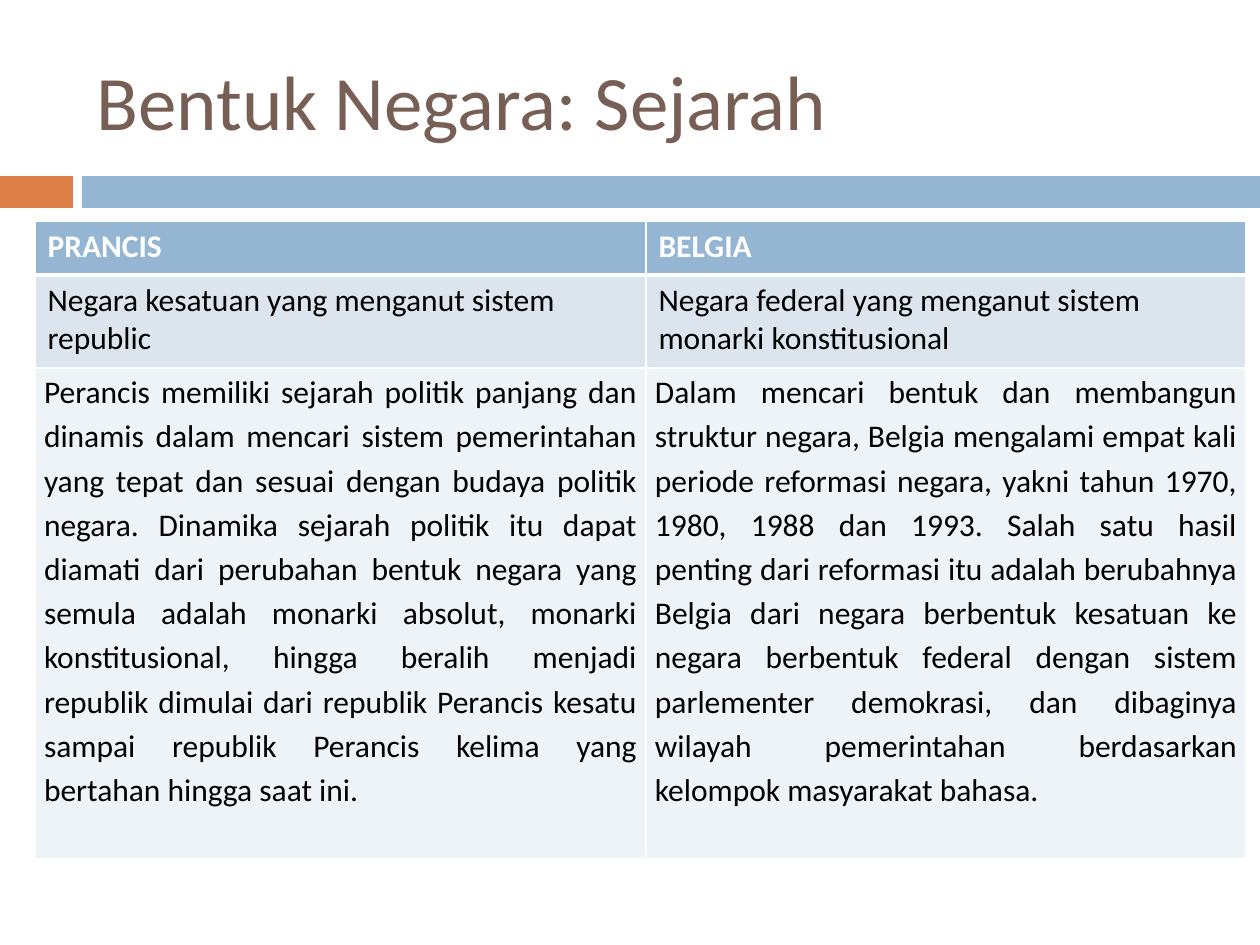
"""Build a slide comparing the history of the form of state in France and Belgium."""
from dataclasses import dataclass

import lxml.etree
import pptx
import pptx.dml.color
import pptx.enum.shapes
import pptx.enum.text
import pptx.oxml.ns
import pptx.util

PIXELS_PER_INCH = 126


@dataclass(frozen=True)
class Theme:
    font: str = "Calibri"
    title_size: int = 44
    table_size: int = 18
    title: str = "775F55"
    orange: str = "DD8047"
    blue: str = "94B6D2"
    band: str = "DCE5EE"
    pale: str = "EEF3F7"
    white: str = "FFFFFF"
    black: str = "000000"


THEME = Theme()


@dataclass(frozen=True)
class Box:
    left: int
    top: int
    width: int
    height: int


@dataclass(frozen=True)
class Bar:
    box: Box
    color: str


@dataclass(frozen=True)
class Row:
    height: int
    texts: tuple[str, str]
    fill: str
    color: str = THEME.black
    header: bool = False
    justified: bool = False
    top_border: int = 1
    bottom_border: int = 1


TITLE_BOX = Box(84, 32, 1124, 136)
TABLE_BOX = Box(35, 221, 1211, 638)
COLUMN_WIDTHS = (611, 600)
BODY_INSET = 9

BARS = (
    Bar(Box(0, 176, 73, 32), THEME.orange),
    Bar(Box(82, 176, 1178, 32), THEME.blue),
)

ROWS = (
    Row(54, ("PRANCIS", "BELGIA"), THEME.blue, THEME.white, header=True, bottom_border=3),
    Row(
        93,
        (
            "Negara kesatuan yang menganut sistem republic",
            "Negara federal yang menganut sistem monarki konstitusional",
        ),
        THEME.band,
        top_border=3,
    ),
    Row(
        491,
        (
            "Perancis memiliki sejarah politik panjang dan dinamis dalam mencari sistem "
            "pemerintahan yang tepat dan sesuai dengan budaya politik negara. Dinamika "
            "sejarah politik itu dapat diamati dari perubahan bentuk negara yang semula "
            "adalah monarki absolut, monarki konstitusional, hingga beralih menjadi "
            "republik dimulai dari republik Perancis kesatu sampai republik Perancis "
            "kelima yang bertahan hingga saat ini.",
            "Dalam mencari bentuk dan membangun struktur negara, Belgia mengalami empat "
            "kali periode reformasi negara, yakni tahun 1970, 1980, 1988 dan 1993. Salah "
            "satu hasil penting dari reformasi itu adalah berubahnya Belgia dari negara "
            "berbentuk kesatuan ke negara berbentuk federal dengan sistem parlementer "
            "demokrasi, dan dibaginya wilayah pemerintahan berdasarkan kelompok "
            "masyarakat bahasa.",
        ),
        THEME.pale,
        justified=True,
    ),
)


def px(length: int) -> pptx.util.Emu:
    return pptx.util.Inches(length / PIXELS_PER_INCH)


def place(box: Box) -> tuple[pptx.util.Emu, ...]:
    return px(box.left), px(box.top), px(box.width), px(box.height)


def rgb(color: str) -> pptx.dml.color.RGBColor:
    return pptx.dml.color.RGBColor.from_string(color)


def format_font(paragraph, size: int, color: str, bold: bool = False) -> None:
    font = paragraph.font
    font.name = THEME.font
    font.size = pptx.util.Pt(size)
    font.bold = bold
    font.color.rgb = rgb(color)


def draw_bar(slide, bar: Bar) -> None:
    rectangle = pptx.enum.shapes.MSO_SHAPE.RECTANGLE
    shape = slide.shapes.add_shape(rectangle, *place(bar.box))
    shape.shadow.inherit = False
    shape.fill.solid()
    shape.fill.fore_color.rgb = rgb(bar.color)
    shape.line.fill.background()


def draw_title(slide, text: str) -> None:
    title = slide.shapes.title
    title.left, title.top, title.width, title.height = place(TITLE_BOX)
    title.text_frame.text = text
    title.text_frame.vertical_anchor = pptx.enum.text.MSO_ANCHOR.MIDDLE
    paragraph = title.text_frame.paragraphs[0]
    paragraph.alignment = pptx.enum.text.PP_ALIGN.LEFT
    format_font(paragraph, THEME.title_size, THEME.title)


def draw_borders(cell, row: Row) -> None:
    properties = cell._tc.get_or_add_tcPr()
    widths = {"lnL": 1, "lnR": 1, "lnT": row.top_border, "lnB": row.bottom_border}
    qualified = pptx.oxml.ns.qn
    for side, width in widths.items():
        line = lxml.etree.SubElement(
            properties, qualified(f"a:{side}"), w=str(pptx.util.Pt(width))
        )
        fill = lxml.etree.SubElement(line, qualified("a:solidFill"))
        lxml.etree.SubElement(fill, qualified("a:srgbClr"), val=THEME.white)


def fill_cell(cell, text: str, row: Row) -> None:
    draw_borders(cell, row)
    cell.fill.solid()
    cell.fill.fore_color.rgb = rgb(row.fill)
    cell.text = text
    paragraph = cell.text_frame.paragraphs[0]
    format_font(paragraph, THEME.table_size, row.color, row.header)
    if row.justified:
        cell.margin_left = cell.margin_right = px(BODY_INSET)
        cell.margin_top = cell.margin_bottom = 0
        paragraph.alignment = pptx.enum.text.PP_ALIGN.JUSTIFY
        paragraph.line_spacing = 1.15


def draw_table(slide, rows: tuple[Row, ...]) -> None:
    frame = slide.shapes.add_table(len(rows), len(COLUMN_WIDTHS), *place(TABLE_BOX))
    table = frame.table
    for column, width in zip(table.columns, COLUMN_WIDTHS):
        column.width = px(width)
    for row_index, row in enumerate(rows):
        table.rows[row_index].height = px(row.height)
        for column_index, text in enumerate(row.texts):
            fill_cell(table.cell(row_index, column_index), text, row)


def main() -> None:
    presentation = pptx.Presentation()
    presentation.slide_width = pptx.util.Inches(10)
    presentation.slide_height = pptx.util.Inches(7.5)
    slide = presentation.slides.add_slide(presentation.slide_layouts.get_by_name("Title Only"))
    for bar in BARS:
        draw_bar(slide, bar)
    draw_title(slide, "Bentuk Negara: Sejarah")
    draw_table(slide, ROWS)
    presentation.save("out.pptx")


if __name__ == "__main__":
    main()
